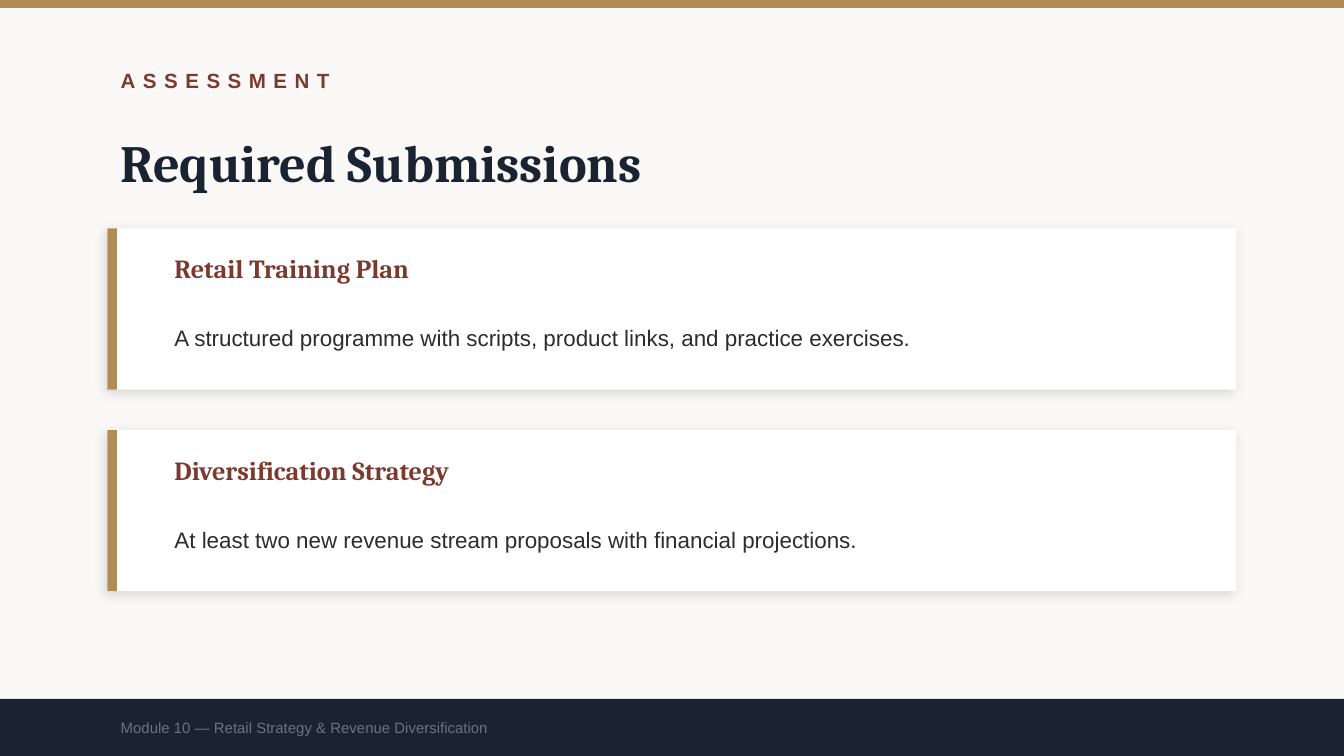
from lxml.etree import SubElement
from pptx import Presentation
from pptx.dml.color import RGBColor
from pptx.enum.shapes import MSO_SHAPE as SHAPE
from pptx.enum.text import MSO_ANCHOR as ANCHOR
from pptx.oxml.ns import qn
from pptx.util import Emu, Pt

PX = 4572  # EMU per px, 200 px to the inch
W, H = 2000, 1125
MARGIN = 160
GOLD, RUST, NAVY = "B08D57", "7C3A2E", "1A2332"
PAPER, WHITE, INK, GREY = "FAF9F7", "FFFFFF", "2C2C2C", "6B7280"
SERIF, SANS = "Cambria", "Arial"

CARDS = [
    ("Retail Training Plan",
     "A structured programme with scripts, product links, and practice exercises."),
    ("Diversification Strategy",
     "At least two new revenue stream proposals with financial projections."),
]


def color(hex_string):
    return RGBColor.from_string(hex_string)


def px(*lengths):
    return [Emu(n * PX) for n in lengths]


def add_rect(s, x, y, w, h, fill):
    sp = s.shapes.add_shape(SHAPE.RECTANGLE, *px(x, y, w, h))
    sp.fill.solid()
    sp.fill.fore_color.rgb = color(fill)
    sp.line.fill.background()
    sp.shadow.inherit = False
    return sp


def add_shadow(sp):
    effects = sp._element.spPr.find(qn("a:effectLst"))
    shadow = SubElement(effects, qn("a:outerShdw"), blurRad=str(Pt(6)),
                        dist=str(Pt(2)), dir=str(135 * 60000),
                        algn="bl", rotWithShape="0")
    black = SubElement(shadow, qn("a:srgbClr"), val="000000")
    SubElement(black, qn("a:alpha"), val="12000")


def add_text(s, x, y, w, h, text, size, font, fill, bold=False):
    tf = s.shapes.add_textbox(*px(x, y, w, h)).text_frame
    tf.word_wrap = True
    tf.vertical_anchor = ANCHOR.MIDDLE
    p = tf.paragraphs[0]
    p.text = text
    p.font.size = Pt(size)
    p.font.name = font
    p.font.bold = bold
    p.font.color.rgb = color(fill)
    return p


def add_header(s, x, y, w):
    p = add_text(s, x, y, w, 80, "ASSESSMENT", 11, SANS, RUST, True)
    p.runs[0].font._element.set("spc", "400")  # letter spacing
    add_text(s, x, y + 100, w, 120, "Required Submissions", 28, SERIF, NAVY, True)


def add_card(s, x, y, w, h, title, body):
    add_shadow(add_rect(s, x, y, w, h, WHITE))
    add_rect(s, x, y, 14, h, GOLD)
    add_text(s, x + 80, y + 24, w - 140, 70, title, 14, SERIF, RUST, True)
    p = add_text(s, x + 80, y + 100, w - 140, 110, body, 12, SANS, INK)
    p.line_spacing = 1.4


def add_footer(s, x, y, w, h):
    add_rect(s, x, y, w, h, NAVY)
    add_text(s, x + MARGIN, y, 1600, h,
             "Module 10 — Retail Strategy & Revenue Diversification", 8, SANS, GREY)


def main():
    prs = Presentation()
    prs.slide_width, prs.slide_height = px(W, H)
    s = prs.slides.add_slide(prs.slide_layouts[6])
    s.background.fill.solid()
    s.background.fill.fore_color.rgb = color(PAPER)

    # Top band and heading
    add_rect(s, 0, 0, W, 12, GOLD)
    add_header(s, MARGIN, 80, 1600)

    # Submission cards
    for i, (title, body) in enumerate(CARDS):
        add_card(s, MARGIN, 340 + i * 300, W - 2 * MARGIN, 240, title, body)

    # Footer band
    add_footer(s, 0, 1040, W, H - 1040)
    prs.save("out.pptx")


if __name__ == "__main__":
    main()
